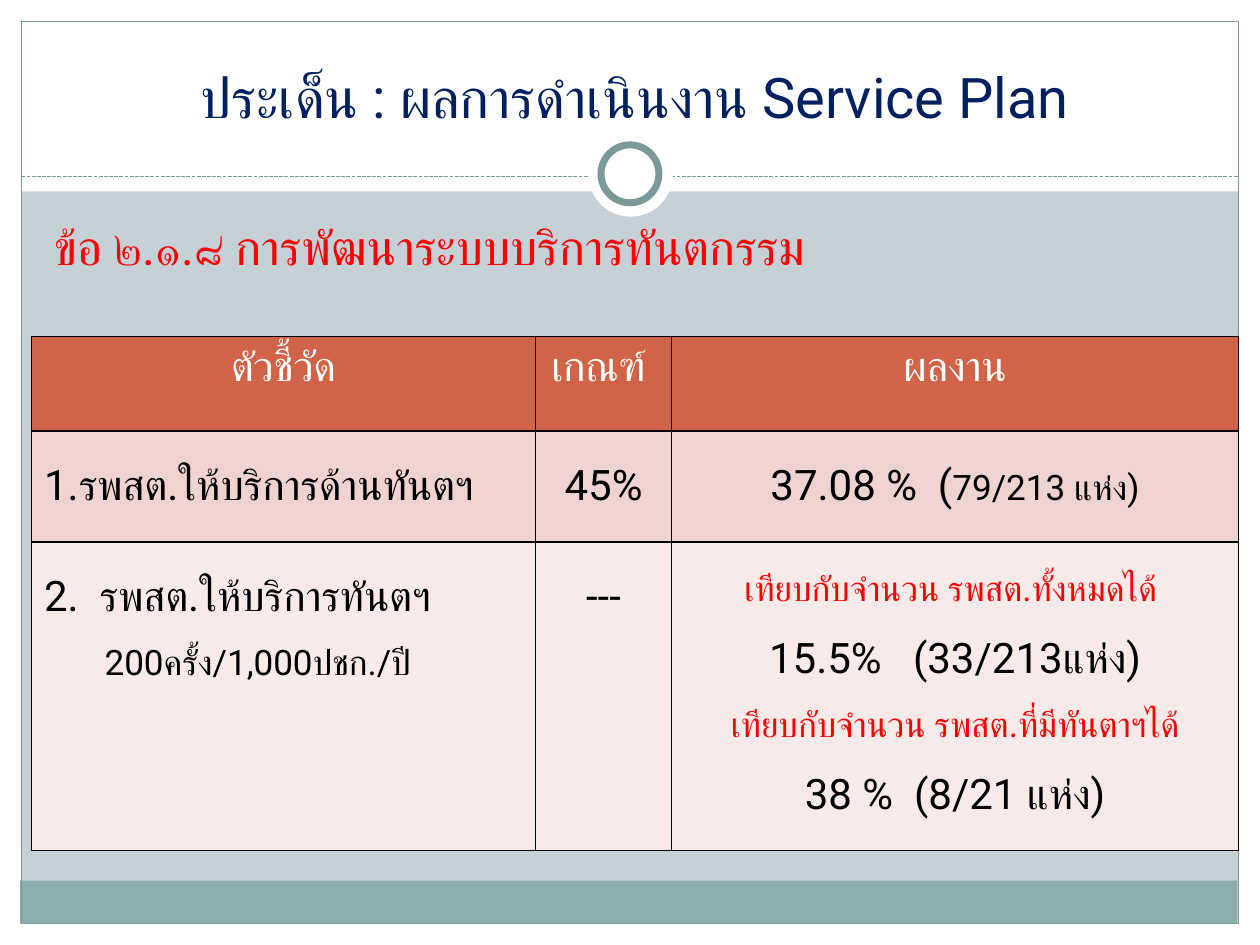
from lxml import etree
from pptx import Presentation
from pptx.dml.color import RGBColor
from pptx.enum.dml import MSO_LINE
from pptx.enum.shapes import MSO_CONNECTOR, MSO_SHAPE
from pptx.enum.text import MSO_ANCHOR, PP_ALIGN
from pptx.oxml import parse_xml
from pptx.oxml.ns import nsdecls, qn
from pptx.util import Inches, Pt

RECT, OVAL = MSO_SHAPE.RECTANGLE, MSO_SHAPE.OVAL
STRAIGHT = MSO_CONNECTOR.STRAIGHT
DASH = MSO_LINE.SQUARE_DOT
LEFT, CENTER = PP_ALIGN.LEFT, PP_ALIGN.CENTER
TOP, BOTTOM = MSO_ANCHOR.TOP, MSO_ANCHOR.BOTTOM

FONT = "Roboto"
WHITE, BLACK, RED, NAVY = "FFFFFF", "000000", "FF0000", "002060"
BACKGROUND, BAND, TRIM = "C5D1D7", "8CADAE", "7C999A"
ROW_FILLS = ["D16349", "EED3D0", "F7EAE9"]
COLUMN_WIDTHS = [4, 1.08, 4.5]
ROW_HEIGHTS = [0.75, 0.88, 2.45]

# Each cell is a list of paragraphs, each paragraph a list of (text, size, colour).
INDICATORS = [
    [[[("ตัวชี้วัด", 24, WHITE)]],
     [[("เกณฑ์ ", 24, WHITE)]],
     [[("ผลงาน", 24, WHITE)]]],
    [[[("1.รพสต.ให้บริการด้านทันตฯ", 24, BLACK)]],
     [[("45%", 24, BLACK)]],
     [[("37.08 %  (", 24, BLACK), ("79/213 แห่ง)", 20, BLACK)]]],
    [[[("2.  รพสต.ให้บริการทันตฯ", 24, BLACK)],
      [("200ครั้ง/1,000ปชก./ปี", 20, BLACK)]],
     [[("---", 24, BLACK)]],
     [[("เทียบกับจำนวน รพสต.ทั้งหมดได้ ", 20, RED)],
      [("15.5%   (33/213แห่ง)", 24, BLACK)],
      [("เทียบกับจำนวน รพสต.ที่มีทันตาฯได้", 20, RED)],
      [("38 %  (8/21 แห่ง)", 24, BLACK)]]],
]


def rgb(value):
    return RGBColor.from_string(value)


def add_panel(slide, kind, box, fill=None, line=None, width=0.75):
    panel = slide.shapes.add_shape(kind, *map(Inches, box))
    panel.shadow.inherit = False
    if fill:
        panel.fill.solid()
        panel.fill.fore_color.rgb = rgb(fill)
    else:
        panel.fill.background()
    if line:
        panel.line.color.rgb = rgb(line)
        panel.line.width = Pt(width)
    else:
        panel.line.fill.background()


def add_divider(slide, left, right, y):
    divider = slide.shapes.add_connector(
        STRAIGHT, Inches(left), Inches(y), Inches(right), Inches(y))
    divider.line.color.rgb = rgb(TRIM)
    divider.line.width = Pt(0.75)
    divider.line.dash_style = DASH
    etree.SubElement(divider._element.spPr, qn("a:effectLst"))


def add_run(paragraph, text, size, color):
    """Add a run whose Latin and Thai letters share one font."""
    run = paragraph.add_run()
    run.text = text
    run.font.size = Pt(size)
    run.font.color.rgb = rgb(color)
    run.font.name = FONT
    thai_font = etree.SubElement(run.font._element, qn("a:cs"))
    thai_font.set("typeface", FONT)


def add_heading(slide, box, text, size, color, align, anchor, space_before=0):
    frame = slide.shapes.add_textbox(*map(Inches, box)).text_frame
    frame.word_wrap = True
    frame.vertical_anchor = anchor
    paragraph = frame.paragraphs[0]
    paragraph.alignment = align
    paragraph.space_before = Pt(space_before)
    add_run(paragraph, text, size, color)


def set_borders(cell):
    properties = cell._tc.get_or_add_tcPr()
    for position, side in enumerate(("lnL", "lnR", "lnT", "lnB")):
        properties.insert(position, parse_xml(
            f'<a:{side} {nsdecls("a")} w="{Pt(1)}"><a:solidFill>'
            f'<a:srgbClr val="{BLACK}"/></a:solidFill></a:{side}>'))


def fill_cell(cell, paragraphs, fill, align, spacing):
    cell.fill.solid()
    cell.fill.fore_color.rgb = rgb(fill)
    set_borders(cell)
    frame = cell.text_frame
    for index, runs in enumerate(paragraphs):
        paragraph = frame.add_paragraph() if index else frame.paragraphs[0]
        paragraph.alignment = align
        paragraph.line_spacing = spacing
        if index and align == LEFT:
            paragraph._p.get_or_add_pPr().set("marL", str(Inches(0.48)))
        for run in runs:
            add_run(paragraph, *run)


def add_indicator_table(slide, left, top):
    table = slide.shapes.add_table(
        len(ROW_HEIGHTS), len(COLUMN_WIDTHS), Inches(left), Inches(top),
        Inches(sum(COLUMN_WIDTHS)), Inches(sum(ROW_HEIGHTS))).table
    for column, width in zip(table.columns, COLUMN_WIDTHS):
        column.width = Inches(width)
    for r, cells in enumerate(INDICATORS):
        table.rows[r].height = Inches(ROW_HEIGHTS[r])
        for c, paragraphs in enumerate(cells):
            align = LEFT if r and c == 0 else CENTER
            fill_cell(table.cell(r, c), paragraphs, ROW_FILLS[r], align,
                      1.5 if r else 1.0)


def add_frame(slide):
    """Draw the white margins, bottom band, outline, divider and ring."""
    margins = [(0, 7.33, 10, 0.17), (0, 0, 10, 1.52),
               (0, 0, 0.17, 7.5), (9.83, 0, 0.17, 7.5)]
    for margin in margins:
        add_panel(slide, RECT, margin, WHITE)
    add_panel(slide, RECT, (0.16, 6.99, 9.66, 0.34), BAND)
    add_panel(slide, RECT, (0.17, 0.17, 9.66, 7.16), line=TRIM)
    add_divider(slide, 0.17, 9.83, 1.4)
    add_panel(slide, OVAL, (4.67, 1.05, 0.67, 0.67), WHITE)
    add_panel(slide, OVAL, (4.77, 1.15, 0.46, 0.46), WHITE, TRIM, 4)


def main():
    deck = Presentation()
    deck.slide_width, deck.slide_height = Inches(10), Inches(7.5)
    slide = deck.slides.add_slide(deck.slide_layouts[6])
    slide.background.fill.solid()
    slide.background.fill.fore_color.rgb = rgb(BACKGROUND)
    add_frame(slide)
    add_heading(slide, (0.25, 0, 9.58, 1.08),
                "ประเด็น : ผลการดำเนินงาน Service Plan", 32, NAVY, CENTER, BOTTOM)
    add_heading(slide, (0.33, 1.67, 9.3, 5),
                "ข้อ ๒.๑.๘ การพัฒนาระบบบริการทันตกรรม", 28, RED, LEFT, TOP, 5.6)
    add_indicator_table(slide, 0.25, 2.67)
    deck.save("out.pptx")


if __name__ == "__main__":
    main()
